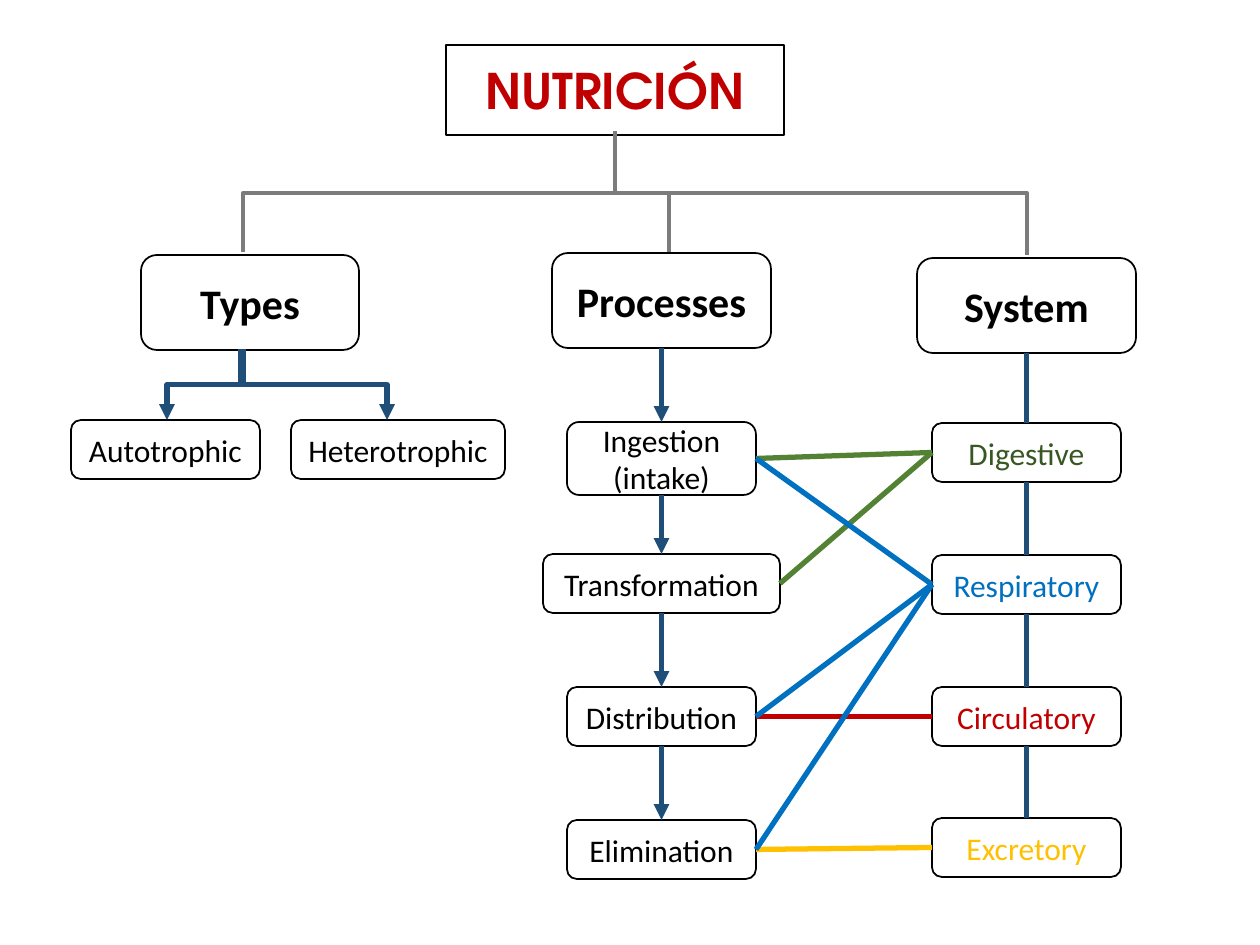
"""Build a concept map of nutrition: types, processes and body systems."""
from dataclasses import dataclass
from itertools import pairwise

import lxml.etree
import pptx
import pptx.dml.color
import pptx.enum.shapes
import pptx.enum.text
import pptx.oxml.ns
import pptx.shapes.autoshape
import pptx.shapes.connector
import pptx.slide
import pptx.util

RGBColor = pptx.dml.color.RGBColor
WHITE = RGBColor(0xFF, 0xFF, 0xFF)
BLACK = RGBColor(0x00, 0x00, 0x00)
RED = RGBColor(0xC0, 0x00, 0x00)
NAVY = RGBColor(0x1F, 0x4E, 0x79)
GRAY = RGBColor(0x7C, 0x7C, 0x7C)
GREEN = RGBColor(0x54, 0x82, 0x35)
DARK_GREEN = RGBColor(0x38, 0x57, 0x23)
BLUE = RGBColor(0x00, 0x70, 0xC0)
AMBER = RGBColor(0xFF, 0xC0, 0x00)

EMU_PER_PX = 914400 / 126
TOP, BOTTOM, LEFT, RIGHT = 0, 2, 1, 3

TITLE_FONT = {"name": "TeX Gyre Adventor", "size": pptx.util.Pt(28), "bold": True}
BRANCH_FONT = {"name": "Calibri", "size": pptx.util.Pt(24), "bold": True}
ITEM_FONT = {"name": "Calibri", "size": pptx.util.Pt(18), "bold": False}
FRAME_FORMAT = {
    "word_wrap": True,
    "auto_size": pptx.enum.text.MSO_AUTO_SIZE.NONE,
    "vertical_anchor": pptx.enum.text.MSO_ANCHOR.MIDDLE,
}


@dataclass(frozen=True)
class Concept:
    """A rounded box with its wording, place in px and text format."""

    text: str
    left: int
    top: int
    width: int = 189
    height: int = 59
    color: RGBColor = BLACK
    font: dict | None = None


@dataclass(frozen=True)
class Branch:
    """An elbow line that leaves downwards, with its ends in px."""

    start: tuple[int, int]
    end: tuple[int, int]
    color: RGBColor
    weight: float
    arrow: bool = False


@dataclass(frozen=True)
class Relation:
    """A line from a process to the system that takes part in it."""

    process: str
    system: str
    color: RGBColor


TITLE = Concept("NUTRICIÓN", 446, 45, 338, 90, RED, TITLE_FONT)
TYPES = [
    Concept("Types", 141, 255, 218, 95, font=BRANCH_FONT),
    Concept("Heterotrophic", 291, 420, 214),
    Concept("Autotrophic", 71, 420),
]
PROCESSES = [
    Concept("Processes", 552, 253, 219, 95, font=BRANCH_FONT),
    Concept("Ingestion (intake)", 567, 422, height=73),
    Concept("Transformation", 543, 554, 237),
    Concept("Distribution", 567, 687),
    Concept("Elimination", 567, 820),
]
SYSTEMS = [
    Concept("System", 917, 258, 219, 95, font=BRANCH_FONT),
    Concept("Digestive", 932, 423, color=DARK_GREEN),
    Concept("Respiratory", 932, 555, color=BLUE),
    Concept("Circulatory", 932, 687, color=RED),
    Concept("Excretory", 932, 818, color=AMBER),
]
BRANCHES = [
    Branch((241, 349), (167, 420), NAVY, 3, True),
    Branch((243, 349), (387, 420), NAVY, 3, True),
    Branch((615, 134), (243, 252), GRAY, 2.25),
    Branch((615, 134), (669, 252), GRAY, 2.25),
    Branch((615, 131), (1027, 255), GRAY, 2.25),
]
RELATIONS = [
    Relation("Ingestion (intake)", "Digestive", GREEN),
    Relation("Transformation", "Digestive", GREEN),
    Relation("Distribution", "Circulatory", RED),
    Relation("Elimination", "Excretory", AMBER),
    Relation("Distribution", "Respiratory", BLUE),
    Relation("Elimination", "Respiratory", BLUE),
    Relation("Ingestion (intake)", "Respiratory", BLUE),
]


def px(length: float) -> pptx.util.Emu:
    """Turn px into EMU."""
    return pptx.util.Emu(round(length * EMU_PER_PX))


def add_xml(parent: lxml.etree.ElementBase, tag: str, **attributes: str) -> lxml.etree.ElementBase:
    """Append a DrawingML element and return it."""
    return lxml.etree.SubElement(parent, pptx.oxml.ns.qn(tag), attributes)


def apply_format(target: object, values: dict) -> None:
    """Set each attribute named in the format values."""
    for attribute, value in values.items():
        setattr(target, attribute, value)


def format_concept(box: pptx.shapes.autoshape.Shape, concept: Concept) -> None:
    """Give a box its fill, outline and centred wording."""
    box.fill.solid()
    box.fill.fore_color.rgb = WHITE
    box.line.color.rgb = BLACK
    box.line.width = pptx.util.Pt(1)
    box.shadow.inherit = False
    apply_format(box.text_frame, FRAME_FORMAT)
    paragraph = box.text_frame.paragraphs[0]
    paragraph.alignment = pptx.enum.text.PP_ALIGN.CENTER
    run = paragraph.add_run()
    run.text = concept.text
    apply_format(run.font, concept.font or ITEM_FONT)
    run.font.color.rgb = concept.color


def place_title(slide: pptx.slide.Slide, concept: Concept) -> None:
    """Move the title placeholder and give it a rounded outline."""
    title = slide.shapes.title
    apply_format(title, {side: px(getattr(concept, side)) for side in ("left", "top", "width", "height")})
    outline = add_xml(title.element.spPr, "a:prstGeom", prst="roundRect")
    add_xml(outline, "a:avLst")
    format_concept(title, concept)


def add_concept(slide: pptx.slide.Slide, concept: Concept) -> pptx.shapes.autoshape.Shape:
    """Draw one rounded box."""
    box = slide.shapes.add_shape(
        pptx.enum.shapes.MSO_SHAPE.ROUNDED_RECTANGLE,
        px(concept.left), px(concept.top), px(concept.width), px(concept.height),
    )
    format_concept(box, concept)
    return box


def format_line(
    line: pptx.shapes.connector.Connector, color: RGBColor, weight: float = 3, arrow: bool = False
) -> None:
    """Give a connector its colour, weight and arrowhead."""
    line.line.color.rgb = color
    line.line.width = pptx.util.Pt(weight)
    if arrow:
        add_xml(line.line._get_or_add_ln(), "a:tailEnd", type="triangle")
    add_xml(line._element.spPr, "a:effectLst")


def add_branch(slide: pptx.slide.Slide, branch: Branch) -> None:
    """Draw an elbow turned a quarter so that it starts and ends upright."""
    (x1, y1), (x2, y2) = branch.start, branch.end
    center_x, center_y = (x1 + x2) / 2, (y1 + y2) / 2
    half_drop, half_span = (y2 - y1) / 2, abs(x2 - x1) / 2
    rightward = x2 > x1
    lead = half_drop if rightward else -half_drop
    elbow = slide.shapes.add_connector(
        pptx.enum.shapes.MSO_CONNECTOR.ELBOW,
        px(center_x + lead), px(center_y - half_span), px(center_x - lead), px(center_y + half_span),
    )
    frame = elbow._element.spPr.find(pptx.oxml.ns.qn("a:xfrm"))
    frame.set("rot", str((270 if rightward else 90) * 60000))
    format_line(elbow, branch.color, branch.weight, branch.arrow)


def join(
    slide: pptx.slide.Slide,
    start: pptx.shapes.autoshape.Shape,
    end: pptx.shapes.autoshape.Shape,
    sides: tuple[int, int],
    color: RGBColor,
    arrow: bool = False,
) -> None:
    """Join the given sides of two boxes with a straight line."""
    line = slide.shapes.add_connector(pptx.enum.shapes.MSO_CONNECTOR.STRAIGHT, 0, 0, 0, 0)
    line.begin_connect(start, sides[0])
    line.end_connect(end, sides[1])
    format_line(line, color, arrow=arrow)


def main() -> None:
    """Build and save the slide."""
    presentation = pptx.Presentation()
    presentation.slide_width, presentation.slide_height = px(1260), px(945)
    slide = presentation.slides.add_slide(presentation.slide_layouts[5])
    place_title(slide, TITLE)
    boxes = {concept.text: add_concept(slide, concept) for concept in TYPES + PROCESSES + SYSTEMS}
    for branch in BRANCHES:
        add_branch(slide, branch)
    for chain, arrow in ((PROCESSES, True), (SYSTEMS, False)):
        for upper, lower in pairwise(chain):
            join(slide, boxes[upper.text], boxes[lower.text], (BOTTOM, TOP), NAVY, arrow)
    for relation in RELATIONS:
        join(slide, boxes[relation.process], boxes[relation.system], (RIGHT, LEFT), relation.color)
    presentation.save("out.pptx")


if __name__ == "__main__":
    main()
